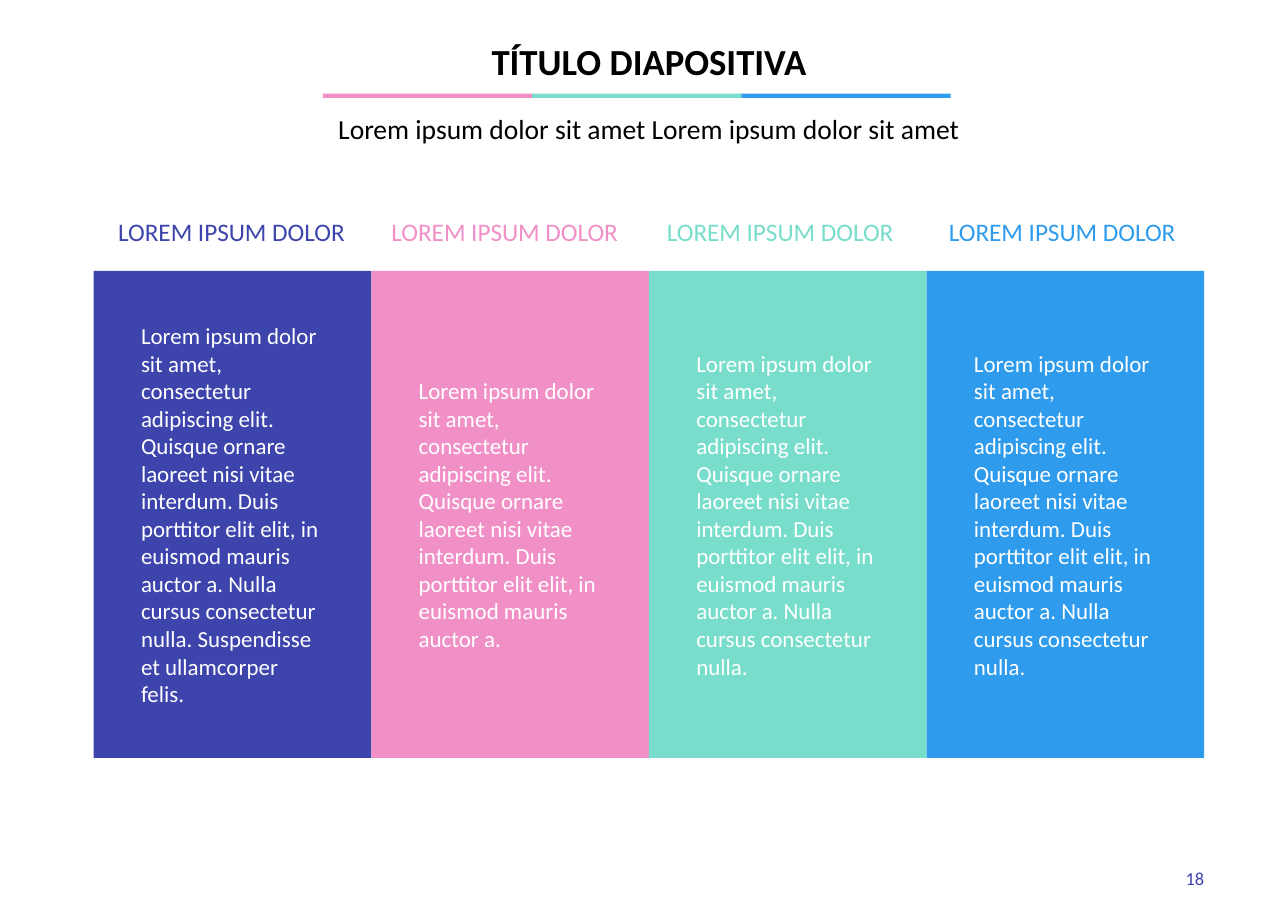
"""Build a slide with a title and four coloured text columns."""
from dataclasses import dataclass
from typing import Sequence

from pptx import Presentation
from pptx.dml.color import RGBColor
from pptx.enum.shapes import MSO_SHAPE
from pptx.enum.text import MSO_ANCHOR, MSO_AUTO_SIZE, PP_ALIGN
from pptx.shapes.autoshape import Shape
from pptx.slide import Slide
from pptx.util import Inches, Pt


@dataclass(frozen=True)
class Theme:
    font: str = "Calibri"
    indigo: str = "3D44AC"
    pink: str = "F090C6"
    mint: str = "78DDCA"
    blue: str = "2E9BED"
    black: str = "000000"
    white: str = "FFFFFF"
    title_size: float = 24
    subtitle_size: float = 18
    header_size: float = 16.5
    body_size: float = 15
    number_size: float = 12


@dataclass(frozen=True)
class Box:
    left: float
    top: float
    width: float
    height: float


@dataclass(frozen=True)
class Column:
    color: str
    header_left: float
    ending: str


THEME = Theme()
MARGIN = 0.85
CONTENT_WIDTH = 10.08
HEADER = "LOREM IPSUM DOLOR"
OPENING = "Lorem ipsum dolor sit amet, consectetur adipiscing elit."
BODY = ("Quisque ornare laoreet nisi vitae interdum. Duis porttitor elit elit, "
        "in euismod mauris auctor a.")
NULLA = " Nulla cursus consectetur nulla."
COLUMNS = (
    Column(THEME.indigo, 0.84, NULLA + " Suspendisse et ullamcorper felis."),
    Column(THEME.pink, 3.32, ""),
    Column(THEME.mint, 5.82, NULLA),
    Column(THEME.blue, 8.38, NULLA),
)
RULE_COLORS = (THEME.pink, THEME.mint, THEME.blue)


def place(shape: Shape, box: Box) -> None:
    """Move and size a shape."""
    for name in ("left", "top", "width", "height"):
        setattr(shape, name, Inches(getattr(box, name)))


def write(shape: Shape, lines: Sequence[str], size: float, color: str,
          alignment: PP_ALIGN = PP_ALIGN.CENTER, bold: bool = False,
          anchor: MSO_ANCHOR = MSO_ANCHOR.TOP,
          insets: tuple[float, float] = (0, 0)) -> None:
    """Fill a shape with formatted paragraphs."""
    frame = shape.text_frame
    horizontal, vertical = map(Inches, insets)
    frame_format = {
        "word_wrap": True, "auto_size": MSO_AUTO_SIZE.NONE,
        "vertical_anchor": anchor,
        "margin_left": horizontal, "margin_right": horizontal,
        "margin_top": vertical, "margin_bottom": vertical,
    }
    for name, value in frame_format.items():
        setattr(frame, name, value)
    frame.text = "\n".join(lines)
    font_format = {"name": THEME.font, "size": Pt(size), "bold": bold}
    for paragraph in frame.paragraphs:
        paragraph.alignment = alignment
        for name, value in font_format.items():
            setattr(paragraph.font, name, value)
        paragraph.font.color.rgb = RGBColor.from_string(color)


def add_text(slide: Slide, box: Box) -> Shape:
    """Add an empty text box."""
    shape = slide.shapes.add_textbox(0, 0, 0, 0)
    place(shape, box)
    return shape


def add_block(slide: Slide, box: Box, color: str) -> Shape:
    """Add a flat rectangle without an outline."""
    shape = slide.shapes.add_shape(MSO_SHAPE.RECTANGLE, 0, 0, 0, 0)
    place(shape, box)
    shape.shadow.inherit = False
    shape.fill.solid()
    shape.fill.fore_color.rgb = RGBColor.from_string(color)
    shape.line.fill.background()
    return shape


def add_heading(slide: Slide) -> None:
    """Format the title and add its rule and subtitle."""
    title = slide.shapes.title
    place(title, Box(MARGIN, 0.35, CONTENT_WIDTH, 0.37))
    write(title, ["TÍTULO DIAPOSITIVA"], THEME.title_size, THEME.black, bold=True)
    rule_width = 1.9
    for index, color in enumerate(RULE_COLORS):
        add_block(slide, Box(2.93 + index * rule_width, 0.85, rule_width, 0.04), color)
    subtitle = add_text(slide, Box(MARGIN, 0.97, CONTENT_WIDTH, 0.33))
    write(subtitle, ["Lorem ipsum dolor sit amet Lorem ipsum dolor sit amet"],
          THEME.subtitle_size, THEME.black, insets=(0.1, 0.05))


def add_columns(slide: Slide) -> None:
    """Add the four headed text columns."""
    width = CONTENT_WIDTH / len(COLUMNS)
    for index, column in enumerate(COLUMNS):
        header = add_text(slide, Box(column.header_left, 1.91, width, 0.38))
        write(header, [HEADER], THEME.header_size, column.color, insets=(0.1, 0.05))
        block = add_block(slide, Box(MARGIN + index * width, 2.46, width, 4.42),
                          column.color)
        write(block, [OPENING, BODY + column.ending], THEME.body_size, THEME.white,
              PP_ALIGN.LEFT, anchor=MSO_ANCHOR.MIDDLE, insets=(0.43, 0.43))


def main() -> None:
    """Build and save the presentation."""
    presentation = Presentation()
    presentation.slide_width = Inches(11.69)
    presentation.slide_height = Inches(8.27)
    slide = presentation.slides.add_slide(presentation.slide_layouts[5])
    add_heading(slide)
    add_columns(slide)
    number = add_text(slide, Box(10.58, 7.87, 0.35, 0.28))
    write(number, ["18"], THEME.number_size, THEME.indigo, PP_ALIGN.RIGHT)
    presentation.save("out.pptx")


if __name__ == "__main__":
    main()
